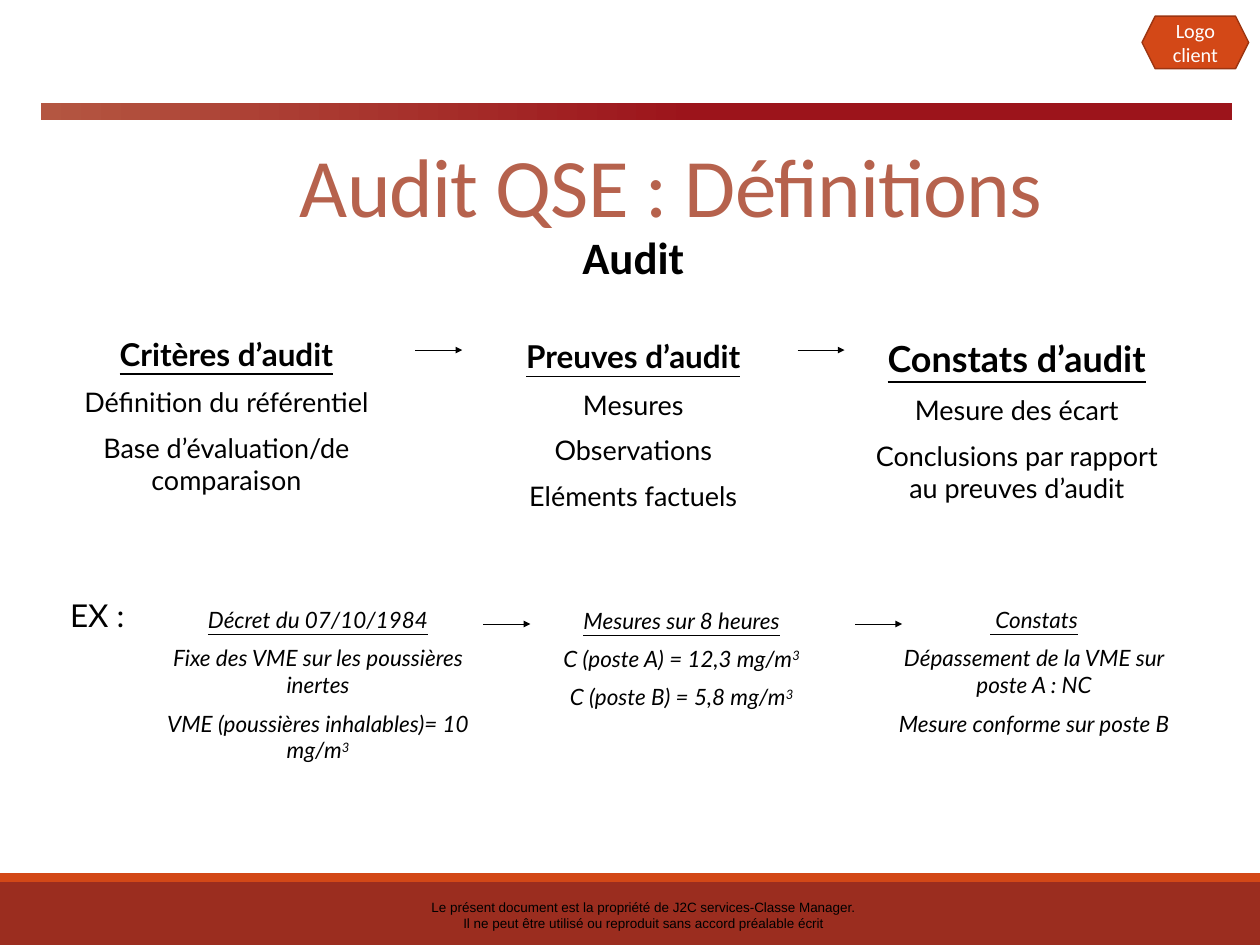
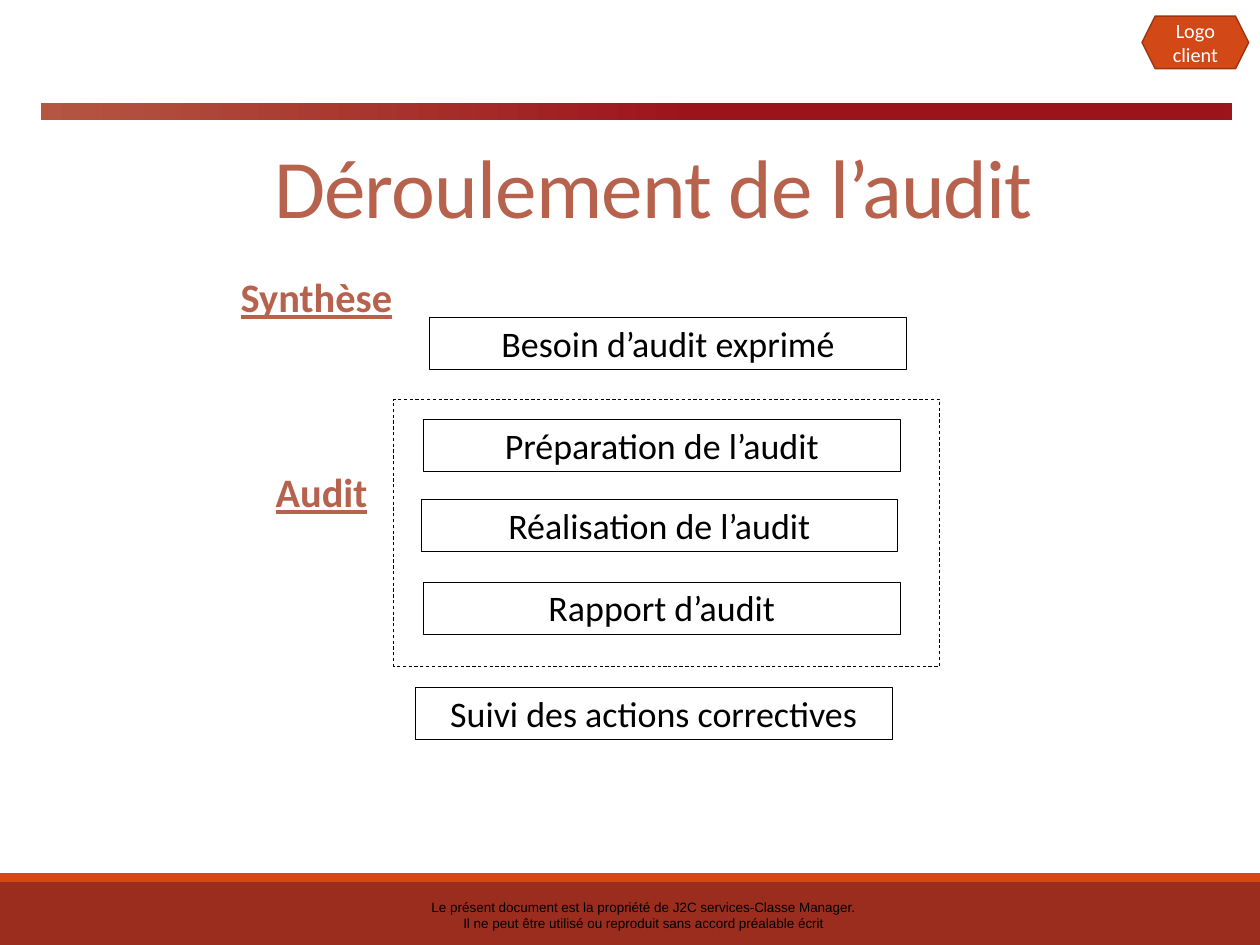
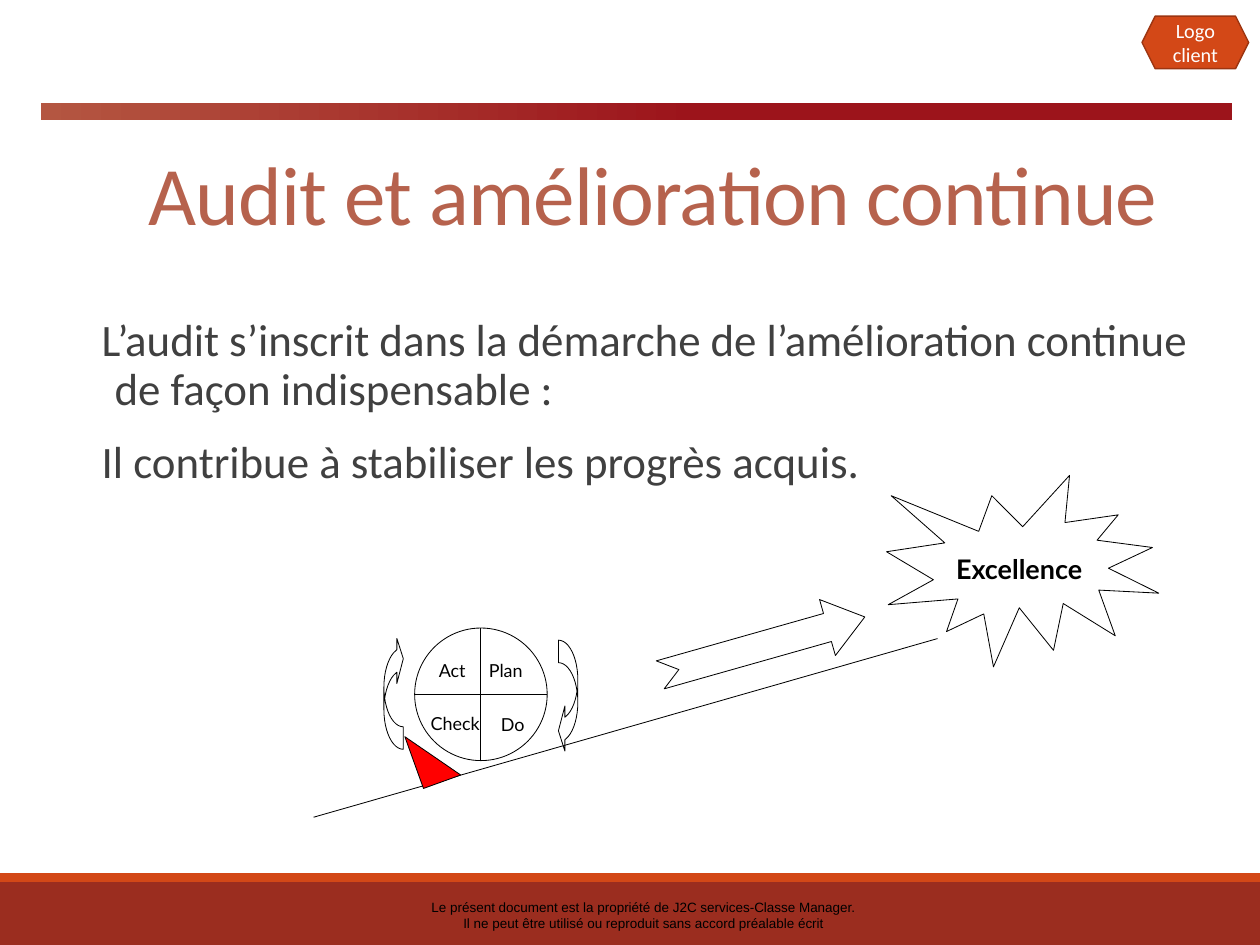
from pptx import Presentation
from pptx.dml.color import RGBColor
from pptx.enum.dml import MSO_LINE
from pptx.enum.shapes import MSO_CONNECTOR, MSO_SHAPE
from pptx.enum.text import MSO_ANCHOR, PP_ALIGN
from pptx.oxml.ns import qn
from pptx.util import Pt
from lxml import etree

LEFT, CENTER = PP_ALIGN.LEFT, PP_ALIGN.CENTER
TOP, MIDDLE = MSO_ANCHOR.TOP, MSO_ANCHOR.MIDDLE
RECT, HEXAGON = MSO_SHAPE.RECTANGLE, MSO_SHAPE.HEXAGON
BURST, WHEEL = MSO_SHAPE.EXPLOSION1, MSO_SHAPE.FLOWCHART_OR
ARROW, CURVED_ARROW = MSO_SHAPE.NOTCHED_RIGHT_ARROW, MSO_SHAPE.CURVED_LEFT_ARROW
WEDGE = MSO_SHAPE.RIGHT_TRIANGLE

COLORS = {
    "black": "000000", "white": "FFFFFF", "body": "404040", "title": "B6624D",
    "footer": "9B2D1F", "accent": "D34817", "accent_edge": "9C3511",
    "bar_light": "B45641", "bar_dark": "9C141B", "red": "FF0000",
}
WIDTH, HEIGHT = 1122.5, 841.7
FOOTER = [
    "Le présent document est la propriété de J2C services-Classe Manager.",
    "Il ne peut être utilisé ou reproduit sans accord préalable écrit",
]

# Text columns: box, heading size, heading, details; "^" raises what follows it
CONCEPTS = [
    ((49, 294.5, 305.3, 157.7), 28, "Critères d’audit",
     ["Définition du référentiel", "Base d’évaluation/de comparaison"]),
    ((438.5, 296.6, 251.3, 172), 28, "Preuves d’audit",
     ["Mesures", "Observations", "Eléments factuels"]),
    ((761.8, 296.6, 288, 162.7), 32, "Constats d’audit",
     ["Mesure des écart", "Conclusions par rapport au preuves d’audit"]),
]
EXAMPLES = [
    ((136.1, 536.4, 294.5, 152.6), 20, "Décret du 07/10/1984",
     ["Fixe des VME sur les poussières inertes",
      "VME (poussières inhalables)= 10 mg/m^3"]),
    ((462.2, 537.1, 290.2, 166.3), 20, "Mesures sur 8 heures",
     ["C (poste A) = 12,3 mg/m^3", "C (poste B) = 5,8 mg/m^3"]),
    ((777.6, 536.4, 287.3, 157.7), 20, " Constats",
     ["Dépassement de la VME sur poste A : NC", "Mesure conforme sur poste B"]),
]
ARROW_STARTS = [(370, 311.8), (710.6, 311.8), (430.6, 555.8), (761.8, 555.8)]
ARROW_LENGTH = 41.8

STEPS = [
    ("Besoin d’audit exprimé", 383, 283),
    ("Préparation de l’audit", 377.3, 373.7),
    ("Réalisation de l’audit", 375.1, 445),
    ("Rapport d’audit", 377.3, 518.4),
    ("Suivi des actions correctives", 370.1, 612.7),
]
STEP_SIZE = (424.8, 46.3)
STEP_LABELS = [("Synthèse", LEFT, (207.4, 244, 200, 51)),
               ("Audit", CENTER, (195.8, 412.6, 181.4, 51))]

IMPROVEMENT = [
    "L’audit s’inscrit dans la démarche de l’amélioration continue de façon indispensable :",
    "Il contribue à stabiliser les progrès acquis.",
]
PDCA = [("Plan", 428.4, 583.9), ("Do", 439.2, 632.2),
        ("Check", 376.6, 631.4), ("Act", 383.8, 583.9)]
TURN_ARROWS = [((497.5, 570.2, 17.3, 100.8), 0), ((342, 566.6, 17.3, 100.8), 180)]


def rgb(name):
    return RGBColor.from_string(COLORS[name])


def points(values):
    return [Pt(value) for value in values]


def write(shape, paragraphs, font="Calibri", size=24, color="black", bold=False,
          italic=False, underline=False, align=CENTER, anchor=TOP, before=None,
          after=0, line=1.0, hanging=0, tracking=0, insets=(7.2, 3.6)):
    """Fill a shape with paragraphs: a string, or a string with its own format."""
    frame = shape.text_frame
    frame.word_wrap = True
    frame.vertical_anchor = anchor
    frame.margin_left = frame.margin_right = Pt(insets[0])
    frame.margin_top = frame.margin_bottom = Pt(insets[1])
    for index, item in enumerate(paragraphs):
        text, own = (item, {}) if isinstance(item, str) else item
        own_size = own.get("size", size)
        paragraph = frame.add_paragraph() if index else frame.paragraphs[0]
        paragraph.alignment = align
        paragraph.line_spacing = line
        paragraph.space_after = Pt(after)
        if index:
            paragraph.space_before = Pt(own_size / 2 if before is None else before)
        if hanging:
            properties = paragraph._p.get_or_add_pPr()
            properties.set("marL", str(Pt(hanging)))
            properties.set("indent", str(-Pt(hanging)))
        for raised, part in enumerate(text.split("^")):
            run = paragraph.add_run()
            run.text = part
            run.font.name = font
            run.font.size = Pt(own_size)
            run.font.color.rgb = rgb(color)
            run.font.bold = own.get("bold", bold)
            run.font.italic = italic
            run.font.underline = own.get("underline", underline)
            if raised:
                run.font._element.set("baseline", "30000")
            if tracking:
                run.font._element.set("spc", str(round(tracking * 100)))


def add_text(shapes, box, paragraphs, **text_format):
    write(shapes.add_textbox(*points(box)), paragraphs, **text_format)


def add_figure(shapes, kind, box, fill=None, edge="black", edge_width=0.75,
               rotation=0, adjustments=()):
    figure = shapes.add_shape(kind, *points(box))
    figure.shadow.inherit = False
    figure.rotation = rotation
    for index, value in enumerate(adjustments):
        figure.adjustments[index] = value
    if fill:
        figure.fill.solid()
        figure.fill.fore_color.rgb = rgb(fill)
    else:
        figure.fill.background()
    if edge:
        figure.line.color.rgb = rgb(edge)
        figure.line.width = Pt(edge_width)
    else:
        figure.line.fill.background()
    return figure


def add_line(shapes, start, end, arrow=False):
    connector = shapes.add_connector(MSO_CONNECTOR.STRAIGHT, *points(start + end))
    connector.line.color.rgb = rgb("black")
    connector.line.width = Pt(0.75)
    if arrow:
        etree.SubElement(connector.line._get_or_add_ln(), qn("a:tailEnd"), type="triangle")
    etree.SubElement(connector._element.spPr, qn("a:effectLst"))


def start_slide(deck, title, left, top, width):
    """Add a slide with the shared bands, footer, logo holder and title."""
    shapes = deck.slides.add_slide(deck.slide_layouts[6]).shapes
    add_figure(shapes, RECT, (0, 785.5, WIDTH, 56.2), fill="footer", edge=None)
    add_figure(shapes, RECT, (0, 777.6, WIDTH, 7.9), fill="accent", edge=None)
    add_text(shapes, (362.2, 794.2, 422.6, 43.2), FOOTER, font="Arial", size=12,
             before=0, insets=(13.7, 6.5))
    logo_holder = add_figure(shapes, HEXAGON, (1017.4, 14.4, 95, 46.8), fill="accent",
                             edge="accent_edge", edge_width=1.25)
    write(logo_holder, ["Logo client"], size=18, color="white", anchor=MIDDLE)
    bar = add_figure(shapes, RECT, (36.7, 91.4, 1060.6, 15.8), edge=None)
    bar.fill.gradient()
    bar.fill.gradient_angle = 0
    stops = (("bar_light", 0), ("bar_dark", 0.55))
    for stop, (color, position) in zip(bar.fill.gradient_stops, stops):
        stop.color.rgb = rgb(color)
        stop.position = position
    add_text(shapes, (left, top, width, 90), [title], size=74, color="title",
             anchor=MIDDLE, line=0.85, tracking=-0.8)
    return shapes


def add_columns(shapes, columns, detail_size, bold=False, italic=False):
    for box, heading_size, heading, details in columns:
        heading_format = {"size": heading_size, "bold": bold, "underline": True}
        add_text(shapes, box, [(heading, heading_format)] + details, font="Lato",
                 size=detail_size, italic=italic)


def build_definitions(deck):
    shapes = start_slide(deck, "Audit QSE : Définitions", 223.9, 126, 747.4)
    add_text(shapes, (78.5, 206.6, 971.3, 52), ["Audit"], size=40, bold=True, line=0.9)
    add_columns(shapes, CONCEPTS, 24, bold=True)
    add_columns(shapes, EXAMPLES, 20, italic=True)
    add_text(shapes, (55.4, 527, 95, 41), ["EX :"], font="Lato", size=28, align=LEFT)
    for x, y in ARROW_STARTS:
        add_line(shapes, (x, y), (x + ARROW_LENGTH, y), arrow=True)


def build_process(deck):
    shapes = start_slide(deck, "Déroulement de l’audit", 144, 126.7, 876.2)
    for label, align, box in STEP_LABELS:
        add_text(shapes, box, [label], size=36, color="title", bold=True,
                 underline=True, align=align, line=0.9 if align == LEFT else 1.0)
    for step, left, top in STEPS:
        write(add_figure(shapes, RECT, (left, top) + STEP_SIZE), [step], size=32)
    audit_scope = add_figure(shapes, RECT, (350.6, 355.7, 486.7, 237.6))
    audit_scope.line.dash_style = MSO_LINE.DASH


def build_improvement(deck):
    shapes = start_slide(deck, "Audit et amélioration continue", 72, 133.2, 1019.5)
    add_text(shapes, (83.5, 279.5, 1007.3, 190), IMPROVEMENT, size=40, color="body",
             align=LEFT, line=0.9, before=18.7, after=3.1, hanging=11.5)
    add_figure(shapes, BURST, (789.8, 423.4, 242.6, 170.6))
    add_text(shapes, (844.6, 488.2, 150.5, 36), ["Excellence"], font="Lato", bold=True,
             align=LEFT)
    add_figure(shapes, ARROW, (584.6, 549.4, 189.4, 51.8), rotation=344.2,
               adjustments=(0.5, 0.667))
    add_line(shapes, (279.4, 727.9), (835.2, 568.8))
    cycle = shapes.add_group_shape().shapes
    add_figure(cycle, WHEEL, (369.4, 559.4, 118.1, 118.1))
    for phase, left, top in PDCA:
        add_text(cycle, (left, top, 72.7, 26.6), [phase], font="Lato", size=16, align=LEFT)
    for box, rotation in TURN_ARROWS:
        add_figure(cycle, CURVED_ARROW, box, rotation=rotation,
                   adjustments=(1.16, 2.32, 0.333))
    add_figure(shapes, WEDGE, (367.9, 648.7, 35.3, 49), fill="red", rotation=340.2)


def main():
    deck = Presentation()
    deck.slide_width, deck.slide_height = points((WIDTH, HEIGHT))
    build_definitions(deck)
    build_process(deck)
    build_improvement(deck)
    deck.save("out.pptx")


if __name__ == "__main__":
    main()
